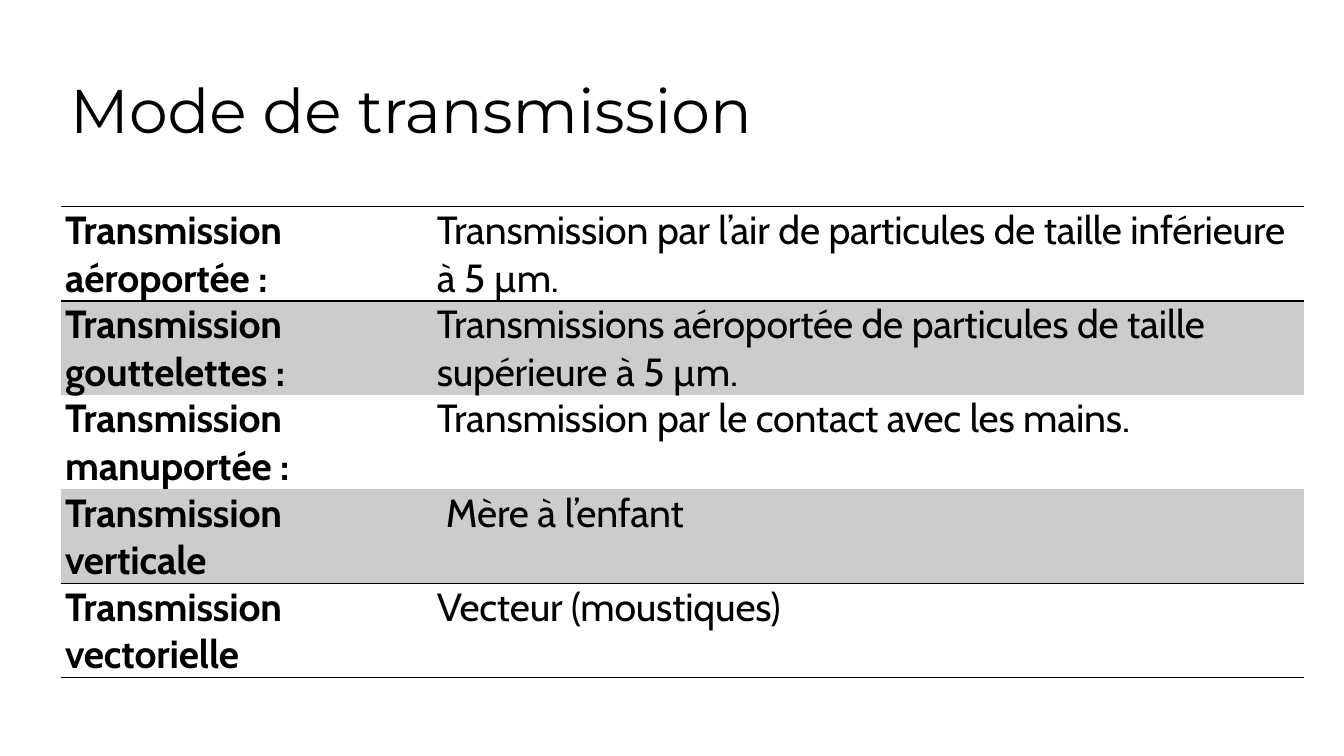
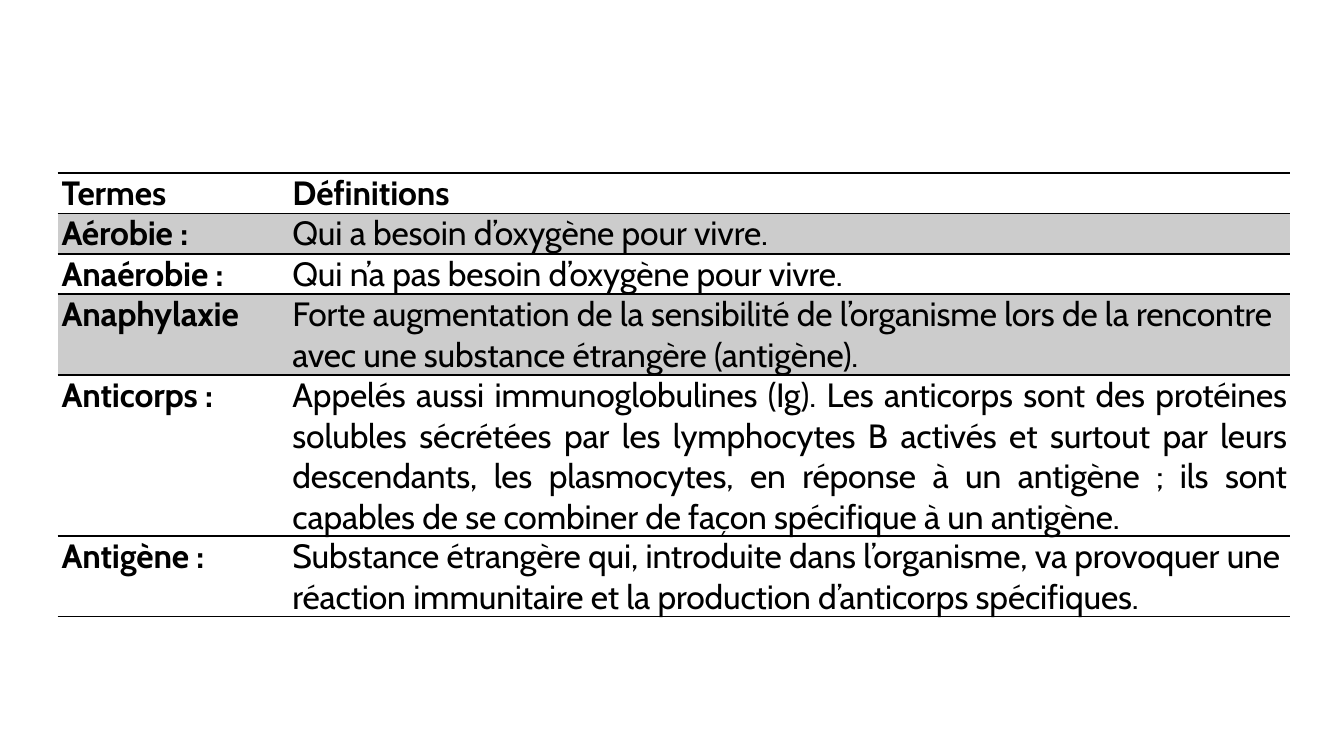
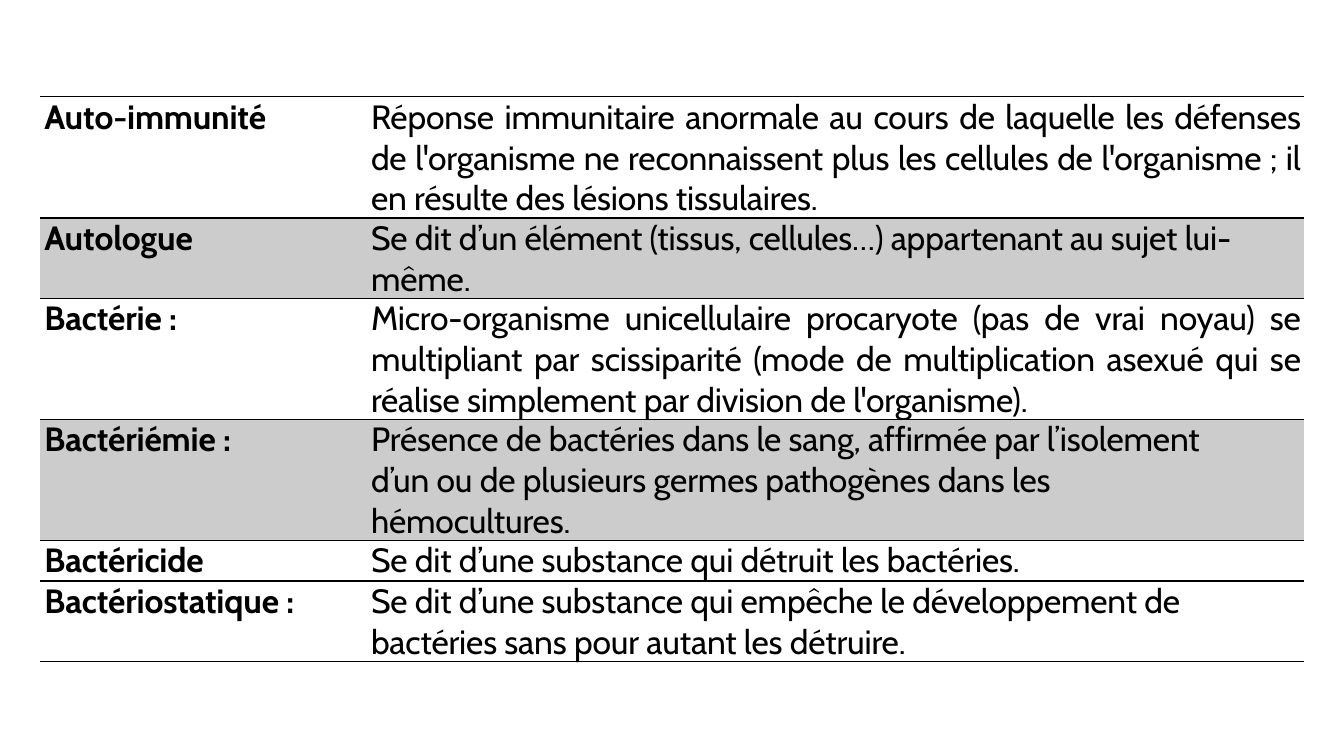
from dataclasses import dataclass

from lxml import etree
from pptx import Presentation
from pptx.dml.color import RGBColor
from pptx.enum.text import MSO_ANCHOR, PP_ALIGN
from pptx.oxml.ns import qn
from pptx.util import Cm, Pt

BLACK = RGBColor(0x00, 0x00, 0x00)
BAND_GREY = RGBColor(0xCC, 0xCC, 0xCC)
TITLE_FONT = "Montserrat"
BODY_FONT = "Cabin"
MIDDLE = MSO_ANCHOR.MIDDLE
LEFT = PP_ALIGN.LEFT
JUSTIFY = PP_ALIGN.JUSTIFY
LINE_RATIO = 0.042
TIGHT_SPACING = "-10"


@dataclass
class Entry:
    term: str
    definition: str
    lines: int = 1
    align: int = LEFT
    bold: bool = False
    indent: float = 0.1
    right: float = 0.1


TRANSMISSION_MODES = [
    Entry("Transmission aéroportée :",
          "Transmission par l’air de particules de taille inférieure à 5 µm.", 2),
    Entry("Transmission gouttelettes :",
          "Transmissions aéroportée de particules de taille supérieure à 5 µm.", 2),
    Entry("Transmission manuportée :",
          "Transmission par le contact avec les mains.", 2),
    Entry("Transmission verticale", "Mère à l’enfant", 2, indent=0.33),
    Entry("Transmission vectorielle", "Vecteur (moustiques)", 2),
]

TERMS_AE_TO_ANTI = [
    Entry("Termes", "Définitions", bold=True),
    Entry("Aérobie :", "Qui a besoin d’oxygène pour vivre."),
    Entry("Anaérobie :", "Qui n’a pas besoin d’oxygène pour vivre."),
    Entry("Anaphylaxie",
          "Forte augmentation de la sensibilité de l’organisme lors de la "
          "rencontre avec une substance étrangère (antigène).", 2),
    Entry("Anticorps :",
          "Appelés aussi immunoglobulines (Ig). Les anticorps sont des protéines "
          "solubles sécrétées par les lymphocytes B activés et surtout par leurs "
          "descendants, les plasmocytes, en réponse à un antigène ; ils sont "
          "capables de se combiner de façon spécifique à un antigène.", 4, JUSTIFY),
    Entry("Antigène :",
          "Substance étrangère qui, introduite dans l’organisme, va provoquer "
          "une réaction immunitaire et la production d’anticorps spécifiques.", 2),
]

TERMS_AUTO_TO_BACT = [
    Entry("Auto-immunité",
          "Réponse immunitaire anormale au cours de laquelle les défenses de "
          "l'organisme ne reconnaissent plus les cellules de l'organisme ; il en "
          "résulte des lésions tissulaires.", 3, JUSTIFY),
    Entry("Autologue",
          "Se dit d’un élément (tissus, cellules…) appartenant au sujet lui-même.", 2),
    Entry("Bactérie :",
          "Micro-organisme unicellulaire procaryote (pas de vrai noyau) se "
          "multipliant par scissiparité (mode de multiplication asexué qui se "
          "réalise simplement par division de l'organisme).", 3, JUSTIFY),
    Entry("Bactériémie :",
          "Présence de bactéries dans le sang, affirmée par l’isolement d’un ou "
          "de plusieurs germes pathogènes dans les hémocultures.", 3, right=1.8),
    Entry("Bactéricide", "Se dit d’une substance qui détruit les bactéries."),
    Entry("Bactériostatique :",
          "Se dit d’une substance qui empêche le développement de bactéries sans "
          "pour autant les détruire.", 2),
]


def set_borders(cell, top, bottom):
    properties = cell._tc.get_or_add_tcPr()
    sides = (("a:lnL", 0), ("a:lnR", 0), ("a:lnT", top), ("a:lnB", bottom))
    for position, (tag, width) in enumerate(sides):
        line = etree.Element(qn(tag), w=str(Pt(width)))
        if width:
            fill = etree.SubElement(line, qn("a:solidFill"))
            etree.SubElement(fill, qn("a:srgbClr"), val=str(BLACK))
        else:
            etree.SubElement(line, qn("a:noFill"))
        properties.insert(position, line)


def write_cell(cell, text, size, bold, align=LEFT, indent=0.1, right=0.1):
    cell.margin_left = Cm(indent)
    cell.margin_right = Cm(right)
    cell.margin_top = cell.margin_bottom = 0
    para = cell.text_frame.paragraphs[0]
    para.text = text
    para.alignment = align
    para.space_before = Pt(1.6)
    para.font.name = BODY_FONT
    para.font.size = Pt(size)
    para.font.bold = bold
    para.font.color.rgb = BLACK
    para._p.pPr.find(qn("a:defRPr")).set("spc", TIGHT_SPACING)


def add_title(page, text, left, top, width, height):
    box = page.shapes.add_textbox(Cm(left), Cm(top), Cm(width), Cm(height))
    frame = box.text_frame
    frame.word_wrap = True
    frame.vertical_anchor = MIDDLE
    para = frame.paragraphs[0]
    para.text = text
    para.line_spacing = 0.9
    para.font.name = TITLE_FONT
    para.font.size = Pt(44)
    para.font.color.rgb = BLACK


def add_glossary(page, entries, left, top, columns, size, rules):
    heights = [Cm(entry.lines * size * LINE_RATIO) for entry in entries]
    frame = page.shapes.add_table(len(entries), len(columns), Cm(left), Cm(top),
                                  Cm(sum(columns)), sum(heights))
    table = frame.table
    table.first_row = table.horz_banding = False
    for column, width in zip(table.columns, columns):
        column.width = Cm(width)
    for index, entry in enumerate(entries):
        row = table.rows[index]
        row.height = heights[index]
        term, definition = row.cells
        write_cell(term, entry.term, size, True)
        write_cell(definition, entry.definition, size, entry.bold,
                   entry.align, entry.indent, entry.right)
        shaded = index % 2 == 1 and index < len(entries) - 1
        for cell in (term, definition):
            if shaded:
                cell.fill.solid()
                cell.fill.fore_color.rgb = BAND_GREY
            else:
                cell.fill.background()
            set_borders(cell, rules[index], rules[index + 1])


def main():
    deck = Presentation()
    deck.slide_width = Cm(33.87)
    deck.slide_height = Cm(19.05)
    blank = deck.slide_layouts[6]
    modes, terms, more_terms = [deck.slides.add_slide(blank) for _ in range(3)]

    add_title(modes, "Mode de transmission", 1.52, 1.02, 30.02, 3.68)
    add_glossary(modes, TRANSMISSION_MODES, 1.54, 5.21, (9.37, 21.95), 28,
                 (1, 1, 0, 0, 1, 1))
    add_glossary(terms, TERMS_AE_TO_ANTI, 1.45, 4.36, (5.82, 25.25), 24,
                 (1, 1, 1.5, 1.5, 1.5, 1.5, 1))
    add_glossary(more_terms, TERMS_AUTO_TO_BACT, 1.02, 2.44, (8.23, 23.62), 24,
                 (1, 1.5, 1.5, 1.5, 1.5, 1.5, 1))
    deck.save("out.pptx")


if __name__ == "__main__":
    main()
